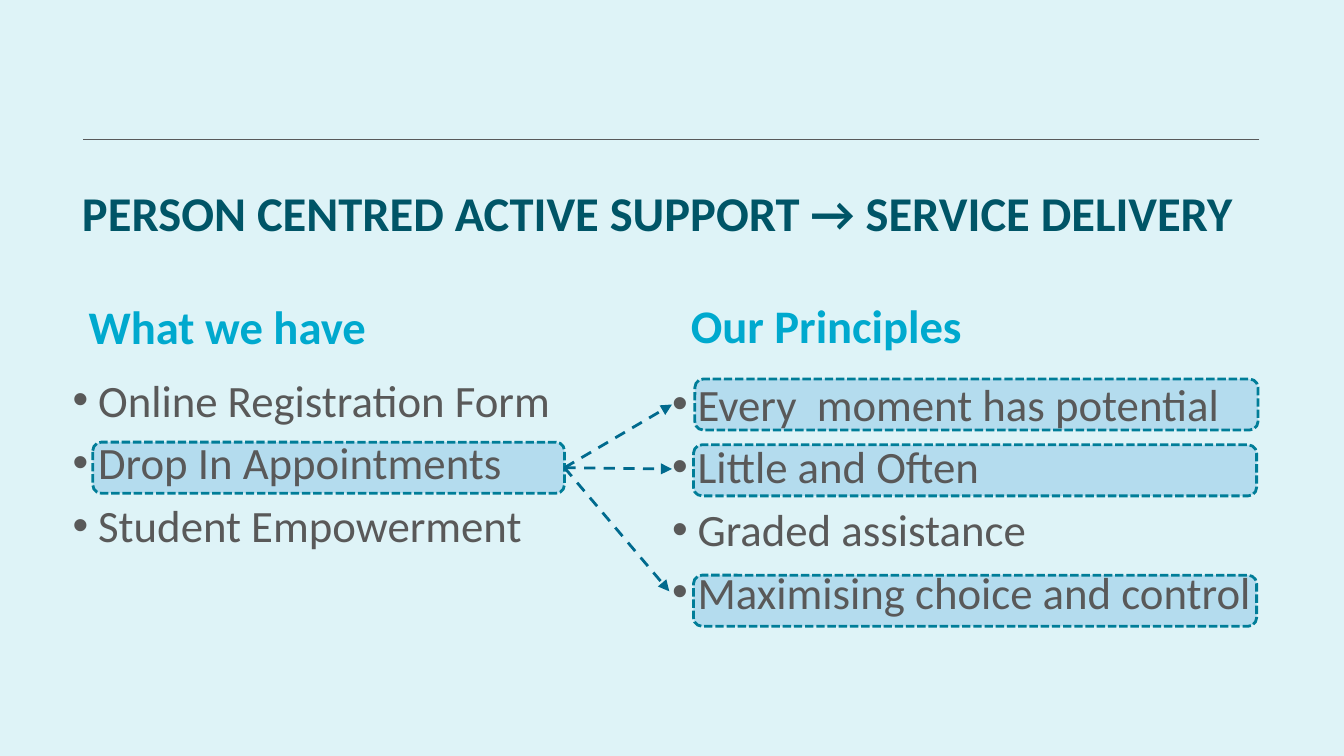
from lxml import etree
from pptx import Presentation
from pptx.dml.color import RGBColor
from pptx.enum import dml, shapes, text
from pptx.oxml import ns
from pptx.util import Inches, Pt

COLORS = {
    "bg": "DEF3F7", "rule": "58595B", "title": "005567", "heading": "00A9CE",
    "body": "595959", "box": "B4DCEE", "border": "007D98", "arrow": "006A8E",
}


def rgb(name):
    return RGBColor.from_string(COLORS[name])


def add_bullet(p):
    pPr = p._p.get_or_add_pPr()
    pPr.set("marL", str(Inches(0.19)))
    pPr.set("indent", str(-Inches(0.19)))
    etree.SubElement(pPr, ns.qn("a:buFont"), typeface="Arial")
    etree.SubElement(pPr, ns.qn("a:buChar"), char="•")


def write(sp, lines, box, size, color, bold=False, bullets=False,
          spacing=1.0, gap=0):
    """Place a text shape in box and fill it with one paragraph per line."""
    sp.left, sp.top, sp.width, sp.height = map(Inches, box)
    tf = sp.text_frame
    tf.word_wrap = True
    tf.auto_size = text.MSO_AUTO_SIZE.NONE
    tf.vertical_anchor = text.MSO_ANCHOR.TOP
    tf.text = "\n".join(lines)
    for i, p in enumerate(tf.paragraphs):
        p.alignment = text.PP_ALIGN.LEFT
        p.line_spacing = spacing
        p.space_before = Pt(gap if i else 0)
        if bullets:
            add_bullet(p)
        for r in p.runs:
            r.font.name = "Calibri"
            r.font.size = Pt(size)
            r.font.bold = bold
            r.font.color.rgb = rgb(color)


def add_line(s, start, end, color, width):
    line = s.shapes.add_connector(
        shapes.MSO_CONNECTOR.STRAIGHT, *map(Inches, (*start, *end)))
    line.line.color.rgb = rgb(color)
    line.line.width = Pt(width)
    etree.SubElement(line.element.spPr, ns.qn("a:effectLst"))
    return line


def add_highlight(s, left, top, width):
    """Add a dashed rounded box behind the list text."""
    sp = s.shapes.add_shape(shapes.MSO_SHAPE.ROUNDED_RECTANGLE,
                            *map(Inches, (left, top, width, 0.38)))
    sp.shadow.inherit = False
    sp.fill.solid()
    sp.fill.fore_color.rgb = rgb("box")
    sp.line.color.rgb = rgb("border")
    sp.line.width = Pt(1.5)
    sp.line.dash_style = dml.MSO_LINE.SQUARE_DOT
    s.shapes.element.insert(2, sp.element)
    return sp


def add_arrow(s, source, end):
    """Run a dashed arrow from the right side of source to end."""
    arrow = add_line(s, end, end, "arrow", 1.5)
    arrow.begin_connect(source, 3)
    arrow.line.dash_style = dml.MSO_LINE.DASH
    ln = arrow.element.spPr.find(ns.qn("a:ln"))
    etree.SubElement(ln, ns.qn("a:tailEnd"), type="triangle")


def add_column(heading_sp, list_sp, heading, items, heading_at, list_at):
    """Fill a heading and the bulleted list below it."""
    write(heading_sp, [heading], (*heading_at, 4.12, 0.26), 25,
          "heading", bold=True, spacing=0.7)
    write(list_sp, items, (*list_at, 4.79, 2.42), 24,
          "body", bullets=True, gap=4.8)


def build_slide(prs):
    s = prs.slides.add_slide(prs.slide_layouts.get_by_name("Comparison"))
    s.background.fill.solid()
    s.background.fill.fore_color.rgb = rgb("bg")
    title, left_head, left_list, right_head, right_list = s.placeholders

    add_line(s, (9.37, 1.04), (0.62, 1.04), "rule", 0.75)
    write(title, ["PERSON CENTRED ACTIVE SUPPORT → SERVICE DELIVERY"],
          (0.51, 1.43, 8.95, 0.34), 26, "title", bold=True, spacing=0.7)
    add_column(left_head, left_list, "What we have",
               ["Online Registration Form", "Drop In Appointments",
                "Student Empowerment"], (0.56, 2.28), (0.44, 2.72))
    add_column(right_head, right_list, "Our Principles",
               ["Every  moment has potential", "Little and Often",
                "Graded assistance", "Maximising choice and control"],
               (5.04, 2.27), (4.9, 2.75))

    drop_in = add_highlight(s, 0.69, 3.29, 3.51)
    for left, top, end in [(5.17, 2.82, (5, 3.01)),
                           (5.16, 3.31, (5, 3.49)),
                           (5.16, 4.28, (4.98, 4.4))]:
        add_highlight(s, left, top, 4.19)
        add_arrow(s, drop_in, end)


def main():
    prs = Presentation()
    prs.slide_width = Inches(10)
    prs.slide_height = prs.slide_width * 9 // 16
    build_slide(prs)
    prs.save("out.pptx")


if __name__ == "__main__":
    main()
